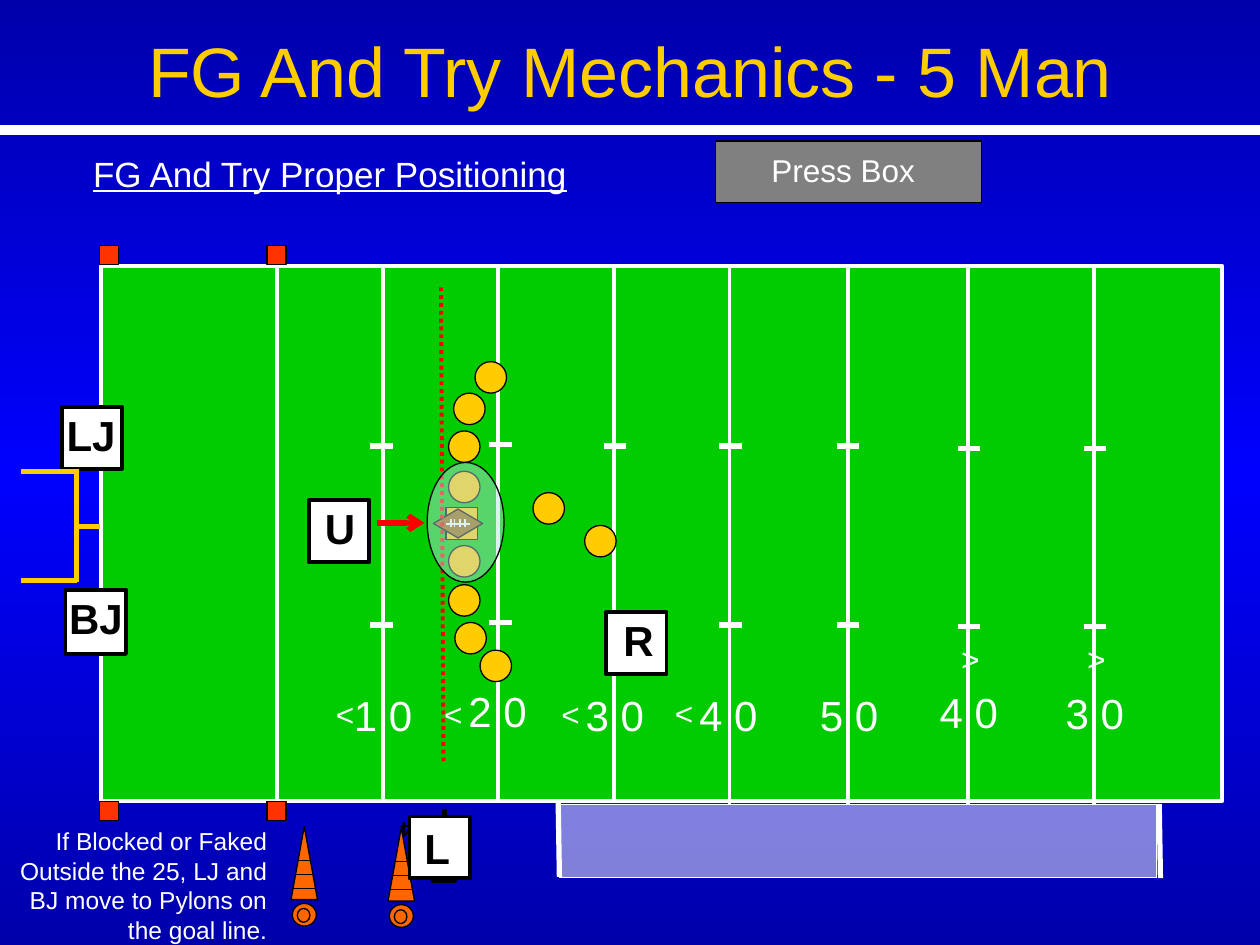
from pptx import Presentation
from pptx.dml.color import RGBColor
from pptx.enum.dml import MSO_LINE
from pptx.enum.shapes import MSO_CONNECTOR, MSO_SHAPE
from pptx.enum.text import PP_ALIGN
from pptx.oxml import parse_xml
from pptx.oxml.ns import qn
from pptx.util import Inches, Pt
from lxml.etree import SubElement

COLORS = {
    "white": "FFFFFF", "black": "000000", "grass": "00CC00", "gold": "FFCC00",
    "pylon": "FF3300", "cone": "FF6600", "red": "FF0000", "gray": "808080",
    "silver": "C0C0C0", "leather": "996600", "haze": "BBE0E3",
    "deep": "0000AA", "blue": "0000FF",
}
RECT, OVAL = MSO_SHAPE.RECTANGLE, MSO_SHAPE.OVAL
DOT = MSO_LINE.ROUND_DOT
LEFT, CENTER, RIGHT = PP_ALIGN.LEFT, PP_ALIGN.CENTER, PP_ALIGN.RIGHT

FIELD = (0.8, 2.11, 8.9, 4.25)
# line x, line top, hash mark x, hash mark ys, number, number left and top
YARD_LINES = [
    (3.04, 2.11, 3.03, (3.54, 4.96), "1 0", 2.61, 5.42),
    (3.95, 2.11, 3.97, (3.53, 4.94), "2 0", 3.52, 5.39),
    (4.87, 2.11, 4.88, (3.54, 4.96), "3 0", 4.45, 5.42),
    (5.79, 2.13, 5.80, (3.54, 4.96), "4 0", 5.35, 5.42),
    (6.73, 2.13, 6.73, (3.54, 4.96), "5 0", 6.31, 5.42),
    (7.68, 2.13, 7.69, (3.56, 4.97), "4 0", 7.26, 5.40),
    (8.68, 2.13, 8.69, (3.56, 4.97), "3 0", 8.26, 5.41),
]
GOAL_LINE_X = 2.2
LEFT_POINTERS = [(2.56, 5.47), (3.42, 5.47), (4.35, 5.47), (5.25, 5.46)]
TURNED_POINTERS = [(7.53, 5.06), (8.53, 5.06)]
CONES = [(2.31, 6.56), (3.08, 6.57)]
# letter, box left, top, height, text left, top, width
OFFICIALS = [
    ("U", 2.45, 3.97, 0.49, 2.48, 3.94, 0.34),
    ("R", 4.81, 4.86, 0.49, 4.85, 4.83, 0.34),
    ("L", 3.25, 6.48, 0.49, 3.27, 6.48, 0.58),
    ("LJ", 0.49, 3.23, 0.49, 0.43, 3.20, 0.76),
    ("BJ", 0.52, 4.68, 0.51, 0.45, 4.65, 0.66),
]
PLAYERS = [
    (3.56, 3.74), (3.56, 3.42), (3.56, 4.33), (3.56, 4.64), (4.64, 4.17),
    (3.81, 5.16), (3.61, 4.94), (3.77, 2.87), (3.60, 3.12), (4.23, 3.91),
]
NOTE = ("If Blocked or Faked Outside the 25, LJ and BJ move to Pylons "
        "on the goal line.")

prs = Presentation()
prs.slide_width, prs.slide_height = Inches(10), Inches(7.5)
s = prs.slides.add_slide(prs.slide_layouts[6])


def rgb(name):
    return RGBColor.from_string(COLORS[name])


def set_background(stops):
    """Vertical gradient from (percent, colour) stops."""
    gs = "".join(f'<a:gs pos="{pos * 1000}"><a:srgbClr val="{COLORS[c]}"/></a:gs>'
                 for pos, c in stops)
    s.element.cSld.insert(0, parse_xml(
        '<p:bg xmlns:p="http://schemas.openxmlformats.org/presentationml/2006/main" '
        'xmlns:a="http://schemas.openxmlformats.org/drawingml/2006/main"><p:bgPr>'
        f'<a:gradFill rotWithShape="1"><a:gsLst>{gs}</a:gsLst>'
        '<a:lin ang="5400000" scaled="1"/></a:gradFill><a:effectLst/></p:bgPr></p:bg>'))


def shape(kind, x, y, w, h, fill=None, line="black", pt=0.75, dash=None, opacity=None):
    sp = s.shapes.add_shape(kind, Inches(x), Inches(y), Inches(w), Inches(h))
    sp.shadow.inherit = False
    if fill:
        sp.fill.solid()
        sp.fill.fore_color.rgb = rgb(fill)
    else:
        sp.fill.background()
    if opacity:
        color = sp.element.spPr.find(qn("a:solidFill"))[0]
        SubElement(color, qn("a:alpha"), val=str(opacity * 1000))
    sp.line.color.rgb = rgb(line)
    sp.line.width = Pt(pt)
    if dash:
        sp.line.dash_style = dash
    return sp


def line(x1, y1, x2, y2, color="white", pt=3, dash=None, arrow=False):
    c = s.shapes.add_connector(MSO_CONNECTOR.STRAIGHT, Inches(x1), Inches(y1),
                               Inches(x2), Inches(y2))
    c.line.color.rgb = rgb(color)
    c.line.width = Pt(pt)
    if dash:
        c.line.dash_style = dash
    if arrow:
        SubElement(c.line._get_or_add_ln(), qn("a:tailEnd"), type="arrow")
    SubElement(c.element.spPr, qn("a:effectLst"))


def text(words, x, y, w, h, size, align=LEFT, color="white", wrap=True,
         bold=False, underline=False, turn=0):
    tb = s.shapes.add_textbox(Inches(x), Inches(y), Inches(w), Inches(h))
    tb.rotation = turn
    tf = tb.text_frame
    tf.word_wrap = wrap
    tf.text = words
    p = tf.paragraphs[0]
    p.alignment = align
    f = p.runs[0].font
    f.name, f.size, f.bold, f.underline = "Arial", Pt(size), bold, underline
    f.color.rgb = rgb(color)


def cone(x, y):
    shape(MSO_SHAPE.ISOSCELES_TRIANGLE, x, y, 0.21, 0.58, "cone")
    shape(OVAL, x + 0.01, y + 0.61, 0.19, 0.18, "cone")
    for dy, half in ((0.27, 0.05), (0.38, 0.07), (0.49, 0.09)):
        line(x + 0.1 - half, y + dy, x + 0.1 + half, y + dy, "black", 0.75)
    shape(OVAL, x + 0.05, y + 0.65, 0.1, 0.11)


set_background([(0, "deep"), (50, "blue"), (100, "deep")])

# Heading
shape(RECT, 5.68, 1.12, 2.11, 0.49, "gray")
line(0, 1.03, 10, 1.03, pt=6)
text("FG And Try Mechanics - 5 Man", 0.17, 0.17, 9.66, 0.77, 40, CENTER, "gold")
text("FG And Try Proper Positioning", 0.64, 1.16, 3.98, 1.27, 20,
     wrap=False, underline=True)
text("Press Box", 6.02, 1.15, 1.34, 0.4, 18, RIGHT, wrap=False)

# Field
field_top, field_height = FIELD[1], FIELD[3]
shape(RECT, *FIELD, "grass", "white", 2.25)
line(GOAL_LINE_X, field_top, GOAL_LINE_X, field_top + field_height, pt=2.25)
for x, top, mark_x, mark_ys, number, num_x, num_y in YARD_LINES:
    line(x, top, x, top + field_height, pt=2.25)
    for y in mark_ys:
        line(mark_x - 0.09, y, mark_x + 0.09, y)
    text(number, num_x, num_y, 0.76, 0.5, 24, RIGHT)
for x in (0.79, 2.12):
    for y in (1.95, 6.36):
        shape(RECT, x, y, 0.15, 0.15, "pylon")
for pointers, turn in ((LEFT_POINTERS, 0), (TURNED_POINTERS, 180)):
    for x, y in pointers:
        text("<", x, y, 0.35, 0.4, 18, RIGHT, wrap=False, turn=turn)

# Team area, cones and down marker
line(4.43, 6.36, 4.44, 6.96)
shape(RECT, 4.44, 6.38, 4.74, 0.58, "white", "white", 0.25, DOT, 50)
line(9.2, 6.38, 9.21, 6.97)
for x, y in CONES:
    cone(x, y)
shape(RECT, 3.44, 6.78, 0.17, 0.21, "silver", pt=2.25)
text("4", 3.08, 6.44, 0.29, 0.3, 12, color="black", wrap=False, bold=True, turn=180)
line(3.53, 6.42, 3.53, 6.77, "black")

# Officials
for letter, x, y, h, text_x, text_y, text_w in OFFICIALS:
    shape(RECT, x, y, 0.48, h, "white", pt=2.25)
    text(letter, text_x, text_y, text_w, 0.5, 24, color="black", bold=True)

# Players and ball
shape(RECT, 3.54, 4.03, 0.25, 0.25, "gold")
for x, y in PLAYERS:
    shape(OVAL, x, y, 0.25, 0.25, "gold")
shape(MSO_SHAPE.FLOWCHART_DECISION, 3.44, 4.04, 0.39, 0.23, "leather")
line(3.54, 4.16, 3.73, 4.16, pt=0.75)
for x in (3.58, 3.61, 3.65, 3.69):
    line(x, 4.12, x, 4.18, pt=0.75)

# Goal post
line(0.61, 3.72, 0.61, 4.62, "gold")
for y in (3.74, 4.61):
    line(0.17, y, 0.61, y, "gold")
line(0.61, 4.18, 0.79, 4.18, "gold")

# Scrimmage line, note and umpire's focus
line(3.5, 2.28, 3.52, 6.04, "red", 2.25, DOT)
text(NOTE, -0.09, 6.51, 2.31, 1.04, 14, RIGHT)
shape(OVAL, 3.39, 3.67, 0.61, 0.95, "haze", opacity=47)
line(2.99, 4.15, 3.37, 4.15, "red", arrow=True)

prs.save("out.pptx")
